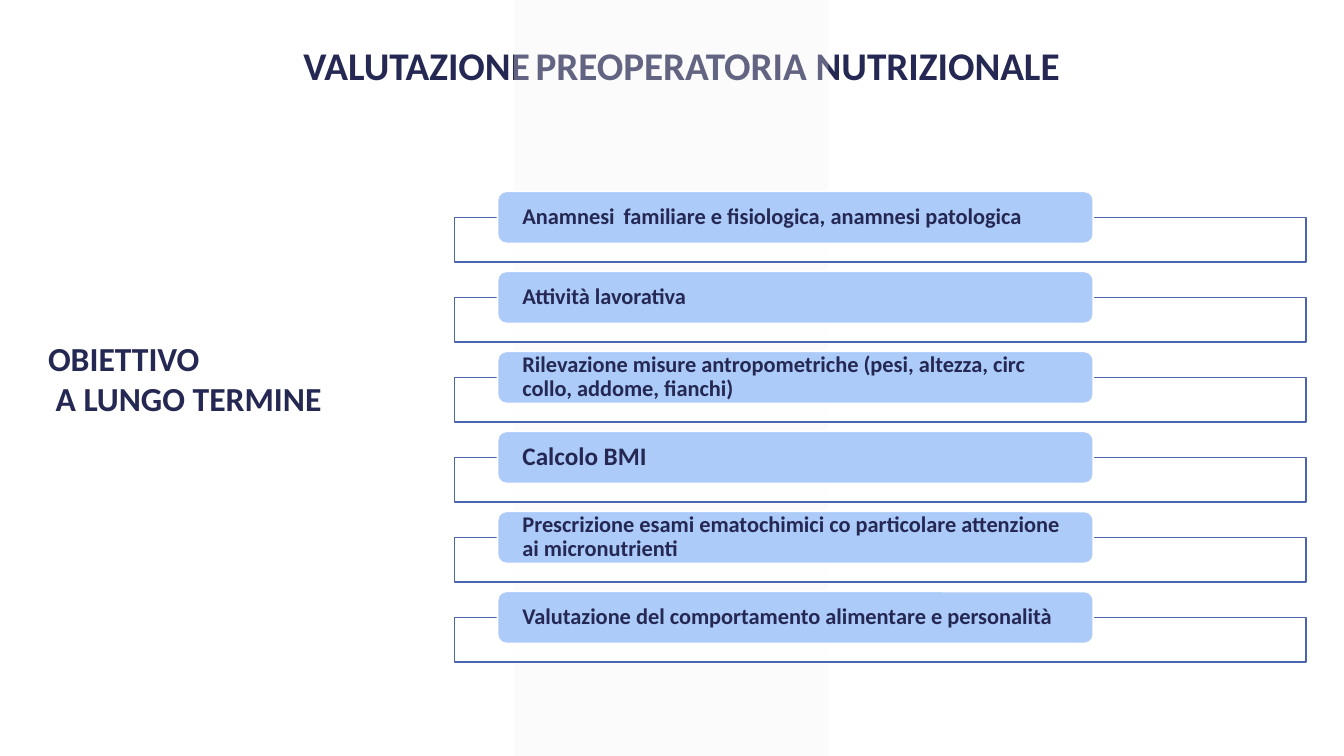
import pptx
import pptx.util
import pptx.dml.color
import pptx.enum.shapes
import pptx.enum.text
import pptx.oxml.ns
import lxml.etree

Pt = pptx.util.Pt
RGBColor = pptx.dml.color.RGBColor
SHAPES = pptx.enum.shapes.MSO_SHAPE
ANCHOR = pptx.enum.text.MSO_ANCHOR
ALIGN = pptx.enum.text.PP_ALIGN

NAVY = RGBColor(0x24, 0x28, 0x52)
BLUE = RGBColor(0x4A, 0x66, 0xAC)
LIGHT_BLUE = RGBColor(0xAC, 0xCB, 0xF9)
GREY = RGBColor(0xF2, 0xF2, 0xF2)
WHITE = RGBColor(0xFF, 0xFF, 0xFF)

FONT = "Calibri"
FIRST_TOP = 136.7
ROW_PITCH = 57.15

# Each step is a list of (text, size) runs
STEPS = [
    [("Anamnesi", 16), (" ", 12),
     (" familiare e fisiologica, anamnesi patologica", 16)],
    [("Attività lavorativa", 16)],
    [("Rilevazione misure antropometriche (pesi, altezza, circ collo, "
      "addome, fianchi)", 16)],
    [("Calcolo BMI", 18)],
    [("Prescrizione esami ematochimici co particolare attenzione ai "
      "micronutrienti", 16)],
    [("Valutazione del comportamento alimentare e personalità", 16)],
]


def add_runs(paragraph, runs):
    paragraph.alignment = ALIGN.LEFT
    for text, size in runs:
        run = paragraph.add_run()
        run.text = text
        run.font.name = FONT
        run.font.size = Pt(size)
        run.font.bold = True
        run.font.color.rgb = NAVY


def add_block(slide, kind, box, fill, line=None, opacity=100):
    block = slide.shapes.add_shape(kind, *map(Pt, box))
    block.shadow.inherit = False
    block.fill.solid()
    block.fill.fore_color.rgb = fill
    if opacity < 100:
        color = block.fill._xPr.find(".//" + pptx.oxml.ns.qn("a:srgbClr"))
        alpha = lxml.etree.SubElement(color, pptx.oxml.ns.qn("a:alpha"))
        alpha.set("val", str(opacity * 1000))
    if line is None:
        block.line.fill.background()
    else:
        block.line.color.rgb = line
        block.line.width = Pt(1.25)
    return block


def add_title(slide):
    title = slide.shapes.title
    title.left, title.top, title.width, title.height = map(
        Pt, (209.5, 26, 625, 41))
    frame = title.text_frame
    frame.auto_size = pptx.enum.text.MSO_AUTO_SIZE.NONE
    frame.vertical_anchor = ANCHOR.TOP
    add_runs(frame.paragraphs[0], [("VALUTAZIONE", 28), (" ", 18),
                                   ("PREOPERATORIA NUTRIZIONALE", 28)])


def add_goal(slide):
    frame = slide.shapes.add_textbox(
        *map(Pt, (27.2, 237.5, 364, 65.5))).text_frame
    frame.word_wrap = True
    add_runs(frame.paragraphs[0], [("OBIETTIVO", 24)])
    add_runs(frame.add_paragraph(), [(" A LUNGO TERMINE", 24)])


def add_step(slide, top, runs):
    add_block(slide, SHAPES.RECTANGLE, (324.7, top + 18.6, 608, 31.7),
              WHITE, BLUE, opacity=90)
    label = add_block(slide, SHAPES.ROUNDED_RECTANGLE,
                      (355.4, top, 425.6, 37.2), LIGHT_BLUE, WHITE)
    frame = label.text_frame
    frame.word_wrap = True
    frame.vertical_anchor = ANCHOR.MIDDLE
    frame.margin_left = frame.margin_right = Pt(16)
    frame.margin_top = frame.margin_bottom = 0
    frame.paragraphs[0].line_spacing = 0.9
    add_runs(frame.paragraphs[0], runs)


def main():
    deck = pptx.Presentation()
    deck.slide_width, deck.slide_height = Pt(960), Pt(540)
    slide = deck.slides.add_slide(deck.slide_layouts.get_by_name("Title Only"))

    # Background band
    add_block(slide, SHAPES.RECTANGLE, (367.2, 0, 224.6, 540), GREY,
              opacity=30)

    # Headings
    add_title(slide)
    add_goal(slide)

    # Assessment steps
    for row, runs in enumerate(STEPS):
        add_step(slide, FIRST_TOP + row * ROW_PITCH, runs)

    deck.save("out.pptx")


if __name__ == "__main__":
    main()
